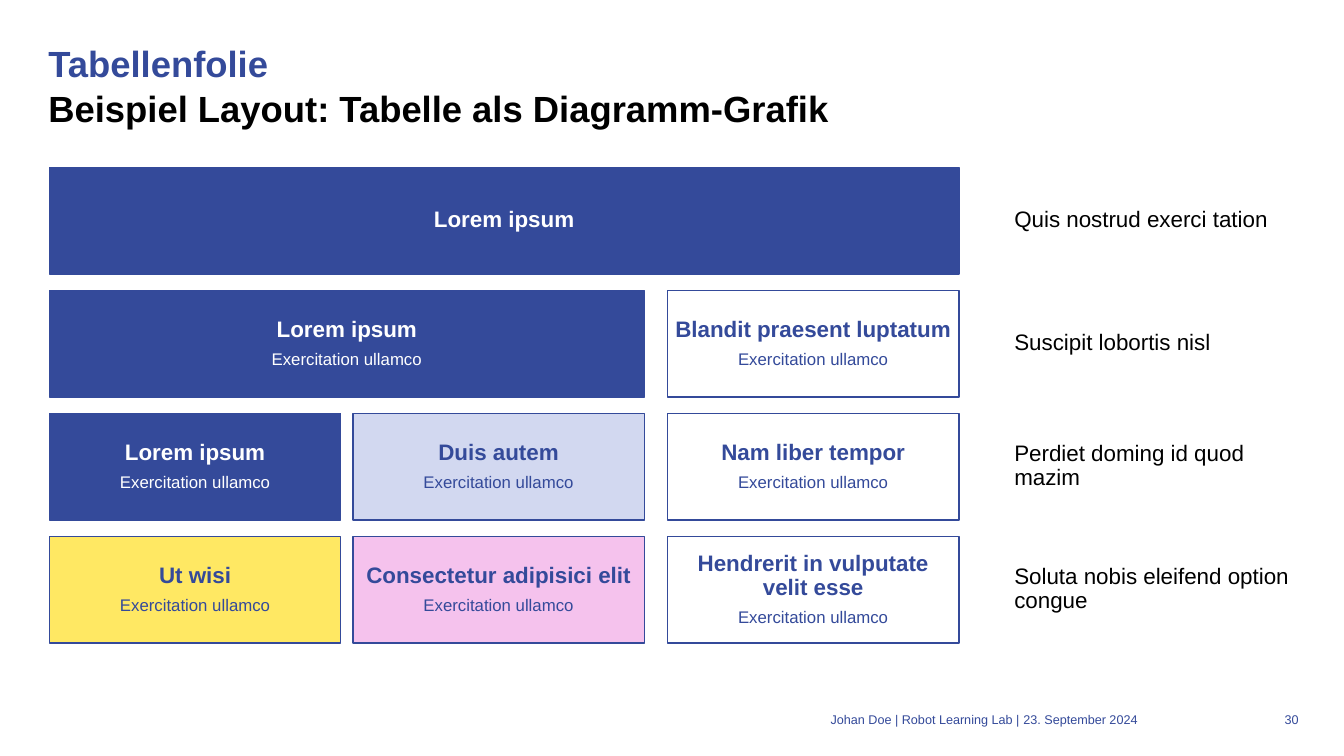
from dataclasses import dataclass

from pptx import Presentation
from pptx import util as u
from pptx.dml.color import RGBColor
from pptx.enum import shapes, text


@dataclass(frozen=True)
class Theme:
    font: str = "Arial"
    blue: str = "344A9A"
    pale: str = "D2D8F0"
    yellow: str = "FFE863"
    pink: str = "F5C2ED"
    white: str = "FFFFFF"
    black: str = "000000"
    title: int = 26
    title_line: int = 32
    head: int = 16
    detail: int = 12
    footer: int = 9
    gap: int = 6
    leading: float = 0.9


@dataclass(frozen=True)
class Grid:
    lefts: tuple[float, ...] = (0.49, 3.5, 6.62, 10.0)
    col_width: float = 2.89
    top: float = 1.66
    row_height: float = 1.06
    row_step: float = 1.22
    inset: float = 0.06

    def box(self, col: int, row: int, span: int) -> list[u.Inches]:
        left = self.lefts[col]
        width = self.lefts[col + span - 1] + self.col_width - left
        lengths = (left, self.top + row * self.row_step, width, self.row_height)
        return [u.Inches(n) for n in lengths]


@dataclass(frozen=True)
class Block:
    col: int
    row: int
    head: str
    fill: str
    ink: str
    span: int = 1
    detail: str = "Exercitation ullamco"


@dataclass(frozen=True)
class Footer:
    left: float
    width: float
    words: str
    align: text.PP_ALIGN = text.PP_ALIGN.RIGHT


T = Theme()
G = Grid()
FOOTER_TOP, FOOTER_HEIGHT = 7.06, 0.2

BLOCKS = [
    Block(0, 0, "Lorem ipsum", T.blue, T.white, span=3, detail=""),
    Block(0, 1, "Lorem ipsum", T.blue, T.white, span=2),
    Block(0, 2, "Lorem ipsum", T.blue, T.white),
    Block(0, 3, "Ut wisi", T.yellow, T.blue),
    Block(1, 2, "Duis autem", T.pale, T.blue),
    Block(1, 3, "Consectetur adipisici elit", T.pink, T.blue),
    Block(2, 1, "Blandit praesent luptatum", T.white, T.blue),
    Block(2, 2, "Nam liber tempor", T.white, T.blue),
    Block(2, 3, "Hendrerit in vulputate velit esse", T.white, T.blue),
]
CAPTIONS = [
    "Quis nostrud exerci tation",
    "Suscipit lobortis nisl",
    "Perdiet doming id quod mazim",
    "Soluta nobis eleifend option congue",
]
FOOTERS = [
    Footer(3.26, 6.85, "Johan Doe | Robot Learning Lab |"),
    Footer(10.15, 1.53, "23. September 2024", text.PP_ALIGN.LEFT),
    Footer(12.49, 0.39, "30"),
]


def style(r, size: int, color: str, bold: bool = False) -> None:
    r.font.name = T.font
    r.font.size = u.Pt(size)
    r.font.bold = bold
    r.font.color.rgb = RGBColor.from_string(color)


def set_insets(tf, inset: float) -> None:
    tf.word_wrap = True
    tf.margin_left = tf.margin_right = u.Inches(inset)
    tf.margin_top = tf.margin_bottom = u.Inches(inset)


def add_text(slide, left: float, top: float, width: float, height: float, words: str):
    sp = slide.shapes.add_textbox(*(u.Inches(n) for n in (left, top, width, height)))
    set_insets(sp.text_frame, 0)
    sp.text_frame.text = words
    return sp.text_frame.paragraphs[0]


def add_cell(slide, block: Block, caption: bool = False) -> None:
    sp = slide.shapes.add_shape(
        shapes.MSO_SHAPE.RECTANGLE, *G.box(block.col, block.row, block.span))
    sp.shadow.inherit = False
    sp.fill.solid()
    sp.fill.fore_color.rgb = RGBColor.from_string(block.fill)
    if caption:
        sp.line.fill.background()
    else:
        sp.line.color.rgb = RGBColor.from_string(T.blue)
        sp.line.width = u.Pt(1)

    tf = sp.text_frame
    set_insets(tf, G.inset)
    tf.vertical_anchor = text.MSO_ANCHOR.MIDDLE
    tf.text = "\n".join(filter(None, (block.head, block.detail)))
    for i, p in enumerate(tf.paragraphs):
        p.alignment = text.PP_ALIGN.LEFT if caption else text.PP_ALIGN.CENTER
        p.line_spacing = T.leading
        p.space_after = u.Pt(T.gap)
        style(p.runs[0], T.detail if i else T.head, block.ink,
              bold=i == 0 and not caption)


def main() -> None:
    prs = Presentation()
    prs.slide_width, prs.slide_height = u.Inches(13.33), u.Inches(7.5)
    slide = prs.slides.add_slide(prs.slide_layouts[6])

    # Two-line title
    p = add_text(slide, 0.48, 0.4, 12.4, 1.06,
                 "Tabellenfolie\vBeispiel Layout: Tabelle als Diagramm-Grafik")
    p.line_spacing = u.Pt(T.title_line)
    for r, color in zip(p.runs, (T.blue, T.black)):
        style(r, T.title, color, bold=True)

    # Block table
    for block in BLOCKS:
        add_cell(slide, block)

    # Row captions
    for row, words in enumerate(CAPTIONS):
        add_cell(slide, Block(3, row, words, T.white, T.black, detail=""), caption=True)

    # Footer
    for item in FOOTERS:
        p = add_text(slide, item.left, FOOTER_TOP, item.width, FOOTER_HEIGHT, item.words)
        p.alignment = item.align
        style(p.runs[0], T.footer, T.blue)

    prs.save("out.pptx")


if __name__ == "__main__":
    main()
